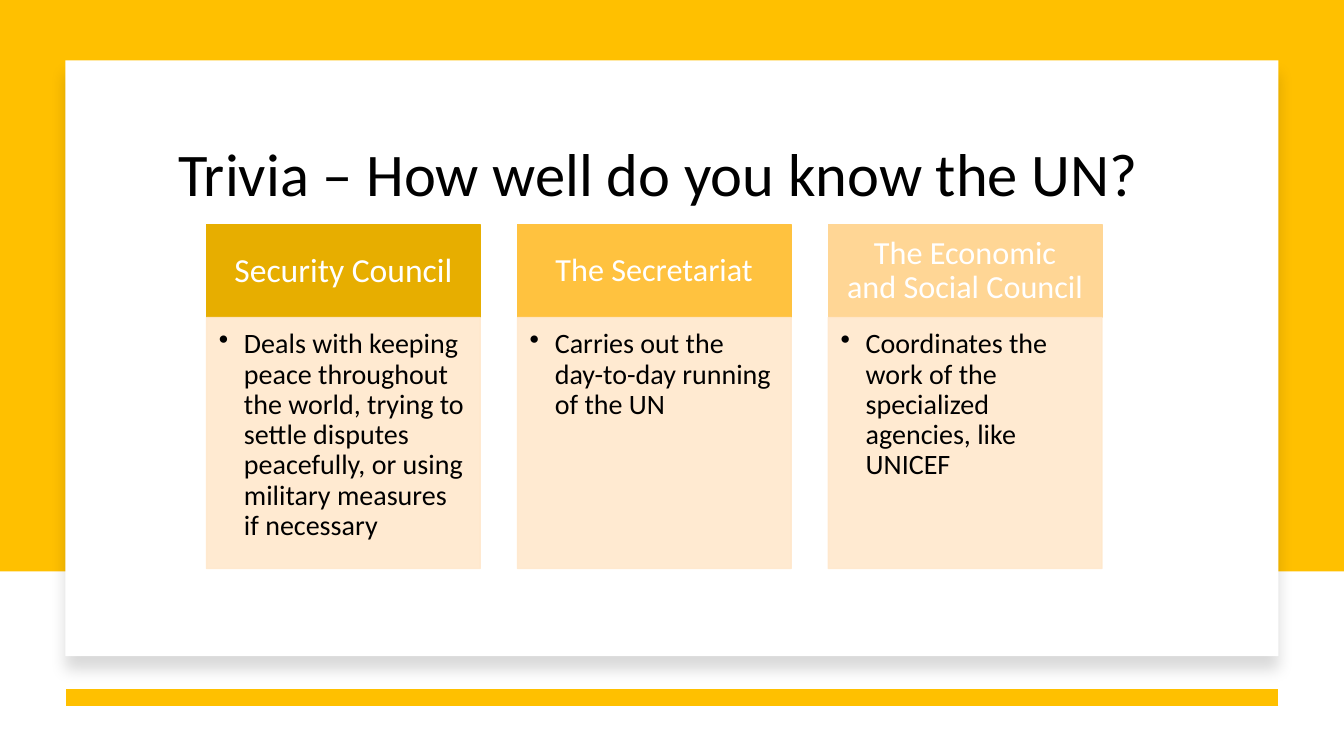
from dataclasses import dataclass

from lxml import etree
from pptx import Presentation
from pptx.dml.color import RGBColor
from pptx.enum.shapes import MSO_CONNECTOR, MSO_SHAPE
from pptx.enum.text import MSO_ANCHOR, PP_ALIGN
from pptx.oxml.ns import qn
from pptx.util import Inches, Pt

RECT = MSO_SHAPE.RECTANGLE
STRAIGHT = MSO_CONNECTOR.STRAIGHT
TOP, MIDDLE, BOTTOM = MSO_ANCHOR.TOP, MSO_ANCHOR.MIDDLE, MSO_ANCHOR.BOTTOM
LEFT, CENTER = PP_ALIGN.LEFT, PP_ALIGN.CENTER


@dataclass(frozen=True)
class Theme:
    """Colours, font and type sizes of the slide."""
    font: str = "Calibri"
    gold: str = "FFC000"
    white: str = "FFFFFF"
    black: str = "000000"
    cream: str = "FFE8CC"
    title: float = 43.2
    body: float = 20


THEME = Theme()
COUNCILS = [
    ("Security Council", "E7AE00", 24,
     "Deals with keeping peace throughout the world, trying to settle disputes "
     "peacefully, or using military measures if necessary"),
    ("The Secretariat", "FFC23F", 23,
     "Carries out the day-to-day running of the UN"),
    ("The Economic and Social Council", "FFD695", 23,
     "Coordinates the work of the specialized agencies, like UNICEF"),
]


def add_rect(slide, box, fill, line=None, alpha=None):
    """Add a flat rectangle, with an outline and opacity if given."""
    sp = slide.shapes.add_shape(RECT, *map(Inches, box))
    sp.shadow.inherit = False
    sp.fill.solid()
    sp.fill.fore_color.rgb = RGBColor.from_string(fill)
    if line:
        sp.line.color.rgb = RGBColor.from_string(line)
        sp.line.width = Pt(1)
    else:
        sp.line.fill.background()
    if alpha:
        for color in sp._element.spPr.iter(qn("a:srgbClr")):
            etree.SubElement(color, qn("a:alpha"), val=str(alpha * 1000))
    return sp


def set_text(sp, text, size, color, align=LEFT, anchor=TOP,
             insets=(0.1, 0.05, 0.1, 0.05), bullet=False):
    """Fill a shape with one formatted paragraph."""
    tf = sp.text_frame
    tf.word_wrap = True
    tf.vertical_anchor = anchor
    tf.margin_left, tf.margin_top, tf.margin_right, tf.margin_bottom = map(Inches, insets)
    p = tf.paragraphs[0]
    p.alignment = align
    p.line_spacing = 0.9
    r = p.add_run()
    r.text = text
    r.font.name = THEME.font
    r.font.size = Pt(size)
    r.font.color.rgb = RGBColor.from_string(color)
    if bullet:
        pPr = p._p.get_or_add_pPr()
        pPr.set("marL", str(Inches(0.25)))
        pPr.set("indent", str(-Inches(0.25)))
        etree.SubElement(pPr, qn("a:buChar"), char="•")


def add_shadow(sp):
    """Give a shape a soft shadow falling straight down."""
    effects = sp._element.spPr.find(qn("a:effectLst"))
    shadow = etree.SubElement(effects, qn("a:outerShdw"), blurRad=str(Pt(11)),
                              dist=str(Pt(10)), dir="5400000", rotWithShape="0")
    color = etree.SubElement(shadow, qn("a:srgbClr"), val=THEME.black)
    etree.SubElement(color, qn("a:alpha"), val="15000")


def add_backdrop(slide, box):
    """Draw the gold band, the raised white card and the bottom rule."""
    x, y, w, h = box
    margin = 0.65
    add_rect(slide, (x, y, w, 5.67), THEME.gold)
    add_shadow(add_rect(slide, (x + margin, y + 0.6, w - 2 * margin, 5.91), THEME.white))
    rule_y = y + h - 0.58
    rule = slide.shapes.add_connector(STRAIGHT, Inches(x + w - margin), Inches(rule_y),
                                      Inches(x + margin), Inches(rule_y))
    rule.line.color.rgb = RGBColor.from_string(THEME.gold)
    rule.line.width = Pt(12)
    etree.SubElement(rule._element.spPr, qn("a:effectLst"))


def add_title(slide, box, text):
    """Place the slide title at the bottom of its box."""
    sp = slide.shapes.add_textbox(*map(Inches, box))
    set_text(sp, text, THEME.title, THEME.black, anchor=BOTTOM)


def add_column(slide, box, name, color, size, duty):
    """Draw one council: a coloured header above its duty."""
    x, y, w, h = box
    head_h = 0.92
    head = add_rect(slide, (x, y, w, head_h), color, line=color)
    set_text(head, name, size, THEME.white, align=CENTER, anchor=MIDDLE,
             insets=(0.18, 0.1, 0.18, 0.1))
    body = add_rect(slide, (x, y + head_h, w, h - head_h), THEME.cream,
                    line=THEME.cream, alpha=90)
    set_text(body, duty, THEME.body, THEME.black,
             insets=(0.12, 0.12, 0.16, 0.17), bullet=True)


def add_columns(slide, box, councils, gap):
    """Spread the councils evenly across the box."""
    x, y, w, h = box
    col_w = (w - gap * (len(councils) - 1)) / len(councils)
    for i, council in enumerate(councils):
        add_column(slide, (x + i * (col_w + gap), y, col_w, h), *council)


def main():
    """Build the slide and save it."""
    prs = Presentation()
    prs.slide_width, prs.slide_height = Inches(13.33), Inches(7.5)
    slide = prs.slides.add_slide(prs.slide_layouts[6])
    add_backdrop(slide, (0, 0, 13.33, 7.5))
    add_title(slide, (1.67, 1.37, 10, 0.76), "Trivia – How well do you know the UN?")
    add_columns(slide, (2.05, 2.23, 8.88, 3.41), COUNCILS, gap=0.37)
    prs.save("out.pptx")


if __name__ == "__main__":
    main()
